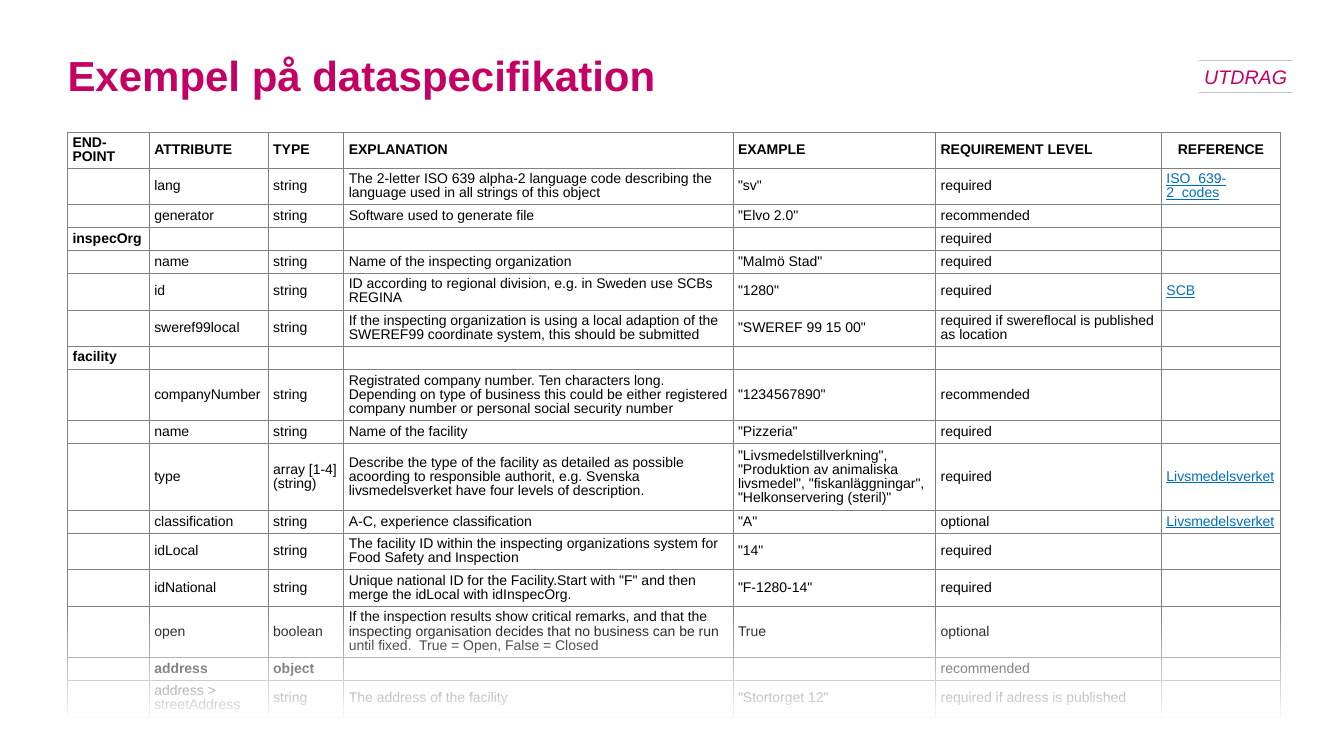
from lxml import etree
from pptx import Presentation
from pptx.dml.color import RGBColor
from pptx.enum.shapes import MSO_CONNECTOR, MSO_SHAPE
from pptx.enum.text import MSO_ANCHOR, PP_ALIGN
from pptx.oxml.ns import qn
from pptx.util import Inches, Pt

LINE = MSO_CONNECTOR.STRAIGHT
RECTANGLE = MSO_SHAPE.RECTANGLE
MIDDLE, BOTTOM = MSO_ANCHOR.MIDDLE, MSO_ANCHOR.BOTTOM
LEFT, CENTER = PP_ALIGN.LEFT, PP_ALIGN.CENTER

COLORS = {"accent": "C40064", "text": "000000", "link": "006EBF",
          "grid": "808080", "rule": "C8C6C6", "fade": "FFFFFF"}
COLUMN_WIDTHS = [0.81, 1.18, 0.75, 3.86, 2.01, 2.24, 1.18]
HEIGHT_BY_LINES = {1: 0.22, 2: 0.34, 3: 0.48, 4: 0.62}
LINES_PER_ROW = [2, 2, 1, 1, 1, 2, 2, 1, 3, 1, 4, 1, 2, 2, 3, 1, 2]
OBJECT_CELLS = {"address", "object"}
REFERENCE_COLUMN = 6

SPECIFICATION = [
    ("END-POINT", "ATTRIBUTE", "TYPE", "EXPLANATION", "EXAMPLE", "REQUIREMENT LEVEL", "REFERENCE"),
    ("", "lang", "string",
     "The 2-letter ISO 639 alpha-2 language code describing the language used in all strings of this object",
     '"sv"', "required", "ISO_639-2_codes"),
    ("", "generator", "string", "Software used to generate file", '"Elvo 2.0"', "recommended", ""),
    ("inspecOrg", "", "", "", "", "required", ""),
    ("", "name", "string", "Name of the inspecting organization", '"Malmö Stad"', "required", ""),
    ("", "id", "string", "ID according to regional division, e.g. in Sweden use SCBs REGINA",
     '"1280"', "required", "SCB"),
    ("", "sweref99local", "string",
     "If the inspecting organization is using a local adaption of the SWEREF99 coordinate system, "
     "this should be submitted",
     '"SWEREF 99 15 00"', "required if swereflocal is published as location", ""),
    ("facility", "", "", "", "", "", ""),
    ("", "companyNumber", "string",
     "Registrated company number. Ten characters long. Depending on type of business this could be "
     "either registered company number or personal social security number",
     '"1234567890"', "recommended", ""),
    ("", "name", "string", "Name of the facility", '"Pizzeria"', "required", ""),
    ("", "type", "array [1-4] (string)",
     "Describe the type of the facility as detailed as possible acoording to responsible authorit, "
     "e.g. Svenska livsmedelsverket have four levels of description.",
     '"Livsmedelstillverkning", "Produktion av animaliska livsmedel", "fiskanläggningar", '
     '"Helkonservering (steril)"',
     "required", "Livsmedelsverket"),
    ("", "classification", "string", "A-C, experience classification", '"A"', "optional", "Livsmedelsverket"),
    ("", "idLocal", "string",
     "The facility ID within the inspecting organizations system for Food Safety and Inspection",
     '"14"', "required", ""),
    ("", "idNational", "string",
     'Unique national ID for the Facility.Start with "F" and then merge the idLocal with idInspecOrg.',
     '"F-1280-14"', "required", ""),
    ("", "open", "boolean",
     "If the inspection results show critical remarks, and that the inspecting organisation decides "
     "that no business can be run until fixed.  True = Open, False = Closed",
     "True", "optional", ""),
    ("", "address", "object", "", "", "recommended", ""),
    ("", "address > streetAddress", "string", "The address of the facility",
     '"Stortorget 12"', "required if adress is published", ""),
]


def write(para, text, size, color="text", bold=False, italic=False, underline=False,
          align=LEFT, spacing=1.0):
    para.alignment = align
    para.line_spacing = spacing
    if not text:
        etree.SubElement(para._p, qn("a:endParaRPr"), sz=str(size * 100))
        return
    span = para.add_run()
    span.text = text
    font = span.font
    font.name, font.size = "Arial", Pt(size)
    font.bold, font.italic, font.underline = bold, italic, underline
    font.color.rgb = RGBColor.from_string(COLORS[color])


class SlideBuilder:
    def __init__(self, deck):
        self.page = deck.slides.add_slide(deck.slide_layouts[6])

    def text(self, left, top, width, height, text, size, anchor=MIDDLE, wrap=True, inset=0, **style):
        box = self.page.shapes.add_textbox(Inches(left), Inches(top), Inches(width), Inches(height))
        frame = box.text_frame
        frame.margin_left = frame.margin_right = 0
        frame.margin_top = frame.margin_bottom = Inches(inset)
        frame.word_wrap = wrap
        frame.vertical_anchor = anchor
        write(frame.paragraphs[0], text, size, **style)

    def border(self, cell):
        properties = cell._tc.get_or_add_tcPr()
        for side in ("lnL", "lnR", "lnT", "lnB"):
            edge = etree.SubElement(properties, qn("a:" + side), w=str(Pt(0.5)))
            fill = etree.SubElement(edge, qn("a:solidFill"))
            etree.SubElement(fill, qn("a:srgbClr"), val=COLORS["grid"])

    def table(self, left, top, rows):
        heights = [HEIGHT_BY_LINES[lines] for lines in LINES_PER_ROW]
        frame = self.page.shapes.add_table(
            len(rows), len(COLUMN_WIDTHS), Inches(left), Inches(top),
            Inches(sum(COLUMN_WIDTHS)), Inches(sum(heights)))
        grid = frame.table
        grid.first_row = grid.horz_banding = False
        for column, width in zip(grid.columns, COLUMN_WIDTHS):
            column.width = Inches(width)
        for row_number, values in enumerate(rows):
            grid.rows[row_number].height = Inches(heights[row_number])
            for column_number, value in enumerate(values):
                cell = grid.cell(row_number, column_number)
                header = row_number == 0
                reference = column_number == REFERENCE_COLUMN
                link = reference and not header
                cell.vertical_anchor = MIDDLE
                cell.margin_left = cell.margin_right = Inches(0.05)
                cell.margin_top = cell.margin_bottom = Inches(0.03)
                self.border(cell)
                cell.fill.background()
                write(cell.text_frame.paragraphs[0], value, 10,
                      color="link" if link else "text", underline=link,
                      bold=header or column_number == 0 or value in OBJECT_CELLS,
                      align=CENTER if header and reference else LEFT, spacing=0.9)

    def rule(self, left, right, top):
        line = self.page.shapes.add_connector(LINE, Inches(left), Inches(top), Inches(right), Inches(top))
        line.line.color.rgb = RGBColor.from_string(COLORS["rule"])
        line.line.width = Pt(1)
        etree.SubElement(line._element.spPr, qn("a:effectLst"))

    def fade(self, left, top, width, height):
        veil = self.page.shapes.add_shape(
            RECTANGLE, Inches(left), Inches(top), Inches(width), Inches(height))
        veil.shadow.inherit = False
        veil.line.fill.background()
        veil.fill.gradient()
        veil.fill.gradient_angle = 270
        for stop in veil.fill.gradient_stops:
            stop.color.rgb = RGBColor.from_string(COLORS["fade"])
        first_color = next(veil._element.spPr.iter(qn("a:srgbClr")))
        etree.SubElement(first_color, qn("a:alpha"), val="0")


def main():
    deck = Presentation()
    deck.slide_width, deck.slide_height = Inches(13.33), Inches(7.5)
    slide = SlideBuilder(deck)
    slide.text(0.67, 0.5, 12, 0.49, "Exempel på dataspecifikation", 30,
               anchor=BOTTOM, color="accent", bold=True)
    slide.table(0.67, 1.31, SPECIFICATION)
    slide.text(11.94, 0.6, 0.83, 0.32, "UTDRAG", 14, wrap=False, inset=0.04,
               color="accent", italic=True, align=CENTER)
    for top in (0.6, 0.92):
        slide.rule(11.89, 12.82, top)
    slide.fade(0.4, 6.07, 12.37, 1.07)
    deck.save("out.pptx")


if __name__ == "__main__":
    main()
